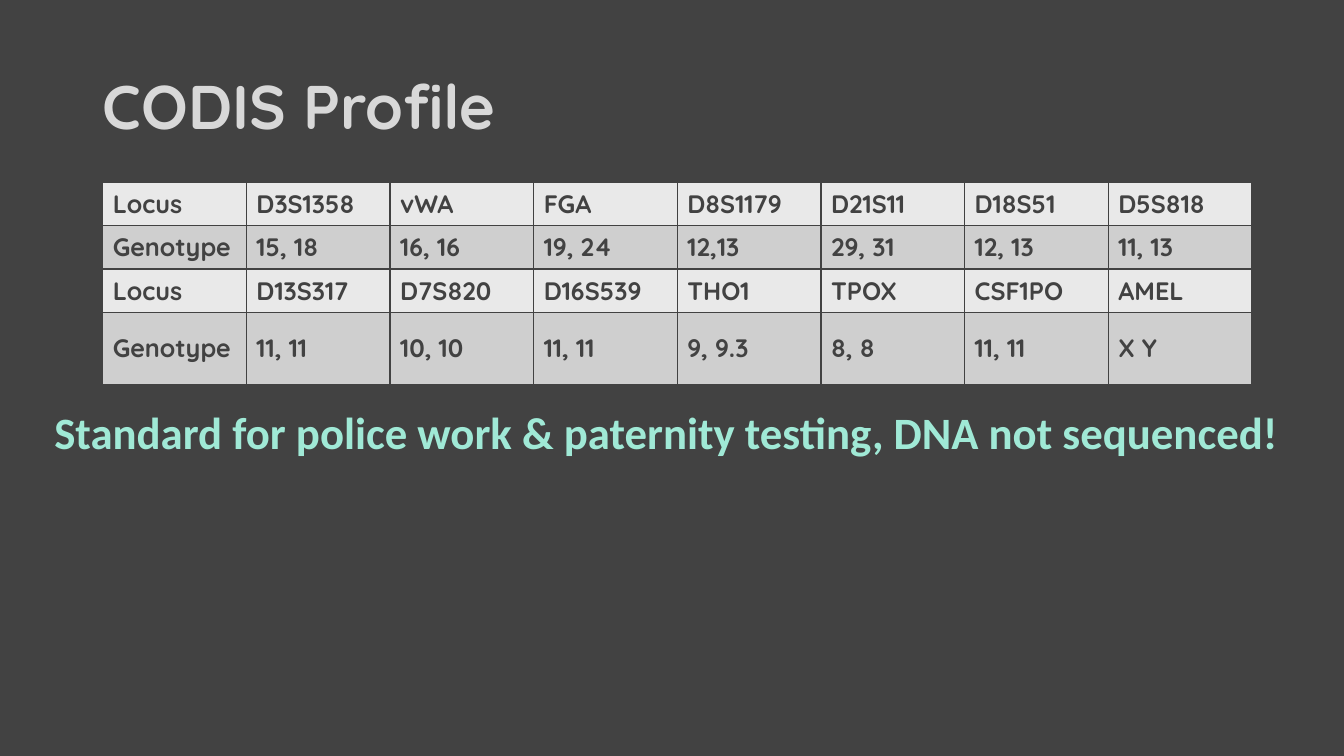
from dataclasses import dataclass

from lxml import etree
from pptx import Presentation
from pptx.dml.color import RGBColor
from pptx.enum import text
from pptx.oxml import ns
from pptx.util import Cm, Pt


@dataclass(frozen=True)
class Theme:
    background: str = "424242"
    heading: str = "D8D8D8"
    accent: str = "A0E9D6"
    locus_fill: str = "E9E9E9"
    genotype_fill: str = "CFCFCF"
    heading_font: str = "Quicksand"
    remark_font: str = "Calibri"
    heading_size: int = 44
    remark_size: int = 32
    cell_size: int = 18
    border_width: int = 1


@dataclass(frozen=True)
class ProfileRow:
    label: str
    values: tuple[str, ...]
    fill: str
    height: float


THEME = Theme()
COLUMN_WIDTH = 3.62

PROFILE = [
    ProfileRow("Locus", ("D3S1358", "vWA", "FGA", "D8S1179", "D21S11", "D18S51", "D5S818"),
               THEME.locus_fill, 1.09),
    ProfileRow("Genotype", ("15, 18", "16, 16", "19, 24", "12,13", "29, 31", "12, 13", "11, 13"),
               THEME.genotype_fill, 1.09),
    ProfileRow("Locus", ("D13S317", "D7S820", "D16S539", "THO1", "TPOX", "CSF1PO", "AMEL"),
               THEME.locus_fill, 1.09),
    ProfileRow("Genotype", ("11, 11", "10, 10", "11, 11", "9, 9.3", "8, 8", "11, 11", "X Y"),
               THEME.genotype_fill, 1.81),
]


def write(frame, words: str, font_name: str, size: int, color: str):
    """Put one bold, left-aligned paragraph into a text frame."""
    frame.text = words
    paragraph = frame.paragraphs[0]
    paragraph.alignment = text.PP_ALIGN.LEFT
    font = paragraph.font
    font.name, font.size, font.bold = font_name, Pt(size), True
    font.color.rgb = RGBColor.from_string(color)
    return paragraph


def add_borders(cell, color: str, width: int) -> None:
    properties = cell._tc.get_or_add_tcPr()
    for side in ("lnL", "lnR", "lnT", "lnB"):
        line = etree.SubElement(properties, ns.qn(f"a:{side}"), w=str(Pt(width)))
        fill = etree.SubElement(line, ns.qn("a:solidFill"))
        etree.SubElement(fill, ns.qn("a:srgbClr"), val=color)


def add_title(slide, words: str) -> None:
    title = slide.shapes.title
    title.left, title.top, title.width, title.height = Cm(2.34), Cm(0.91), Cm(29.21), Cm(3.68)
    title.text_frame.vertical_anchor = text.MSO_ANCHOR.MIDDLE
    heading = write(title.text_frame, words, THEME.heading_font,
                    THEME.heading_size, THEME.heading)
    heading.line_spacing = 0.9


def add_profile(slide, rows: list[ProfileRow]) -> None:
    column_count = 1 + len(rows[0].values)
    profile = slide.shapes.add_table(
        len(rows), column_count, Cm(2.59), Cm(4.6),
        Cm(COLUMN_WIDTH * column_count), Cm(sum(row.height for row in rows))).table
    for column in profile.columns:
        column.width = Cm(COLUMN_WIDTH)
    for row, table_row in zip(rows, profile.rows):
        table_row.height = Cm(row.height)
        for cell, words in zip(table_row.cells, (row.label, *row.values)):
            add_borders(cell, THEME.background, THEME.border_width)
            cell.fill.solid()
            cell.fill.fore_color.rgb = RGBColor.from_string(row.fill)
            cell.vertical_anchor = text.MSO_ANCHOR.MIDDLE
            write(cell.text_frame, words, THEME.heading_font,
                  THEME.cell_size, THEME.background)


def add_remark(slide, words: str) -> None:
    remark = slide.shapes.add_textbox(Cm(1.12), Cm(10.08), Cm(31.65), Cm(1.63)).text_frame
    remark.word_wrap = False
    remark.auto_size = text.MSO_AUTO_SIZE.SHAPE_TO_FIT_TEXT
    write(remark, words, THEME.remark_font, THEME.remark_size, THEME.accent)


def main() -> None:
    # Slide and background
    deck = Presentation()
    deck.slide_width, deck.slide_height = Cm(33.87), Cm(19.05)
    slide = deck.slides.add_slide(deck.slide_layouts.get_by_name("Title Only"))
    slide.background.fill.solid()
    slide.background.fill.fore_color.rgb = RGBColor.from_string(THEME.background)

    # Content
    add_title(slide, "CODIS Profile")
    add_profile(slide, PROFILE)
    add_remark(slide, "Standard for police work & paternity testing, DNA not sequenced!")

    deck.save("out.pptx")


if __name__ == "__main__":
    main()
